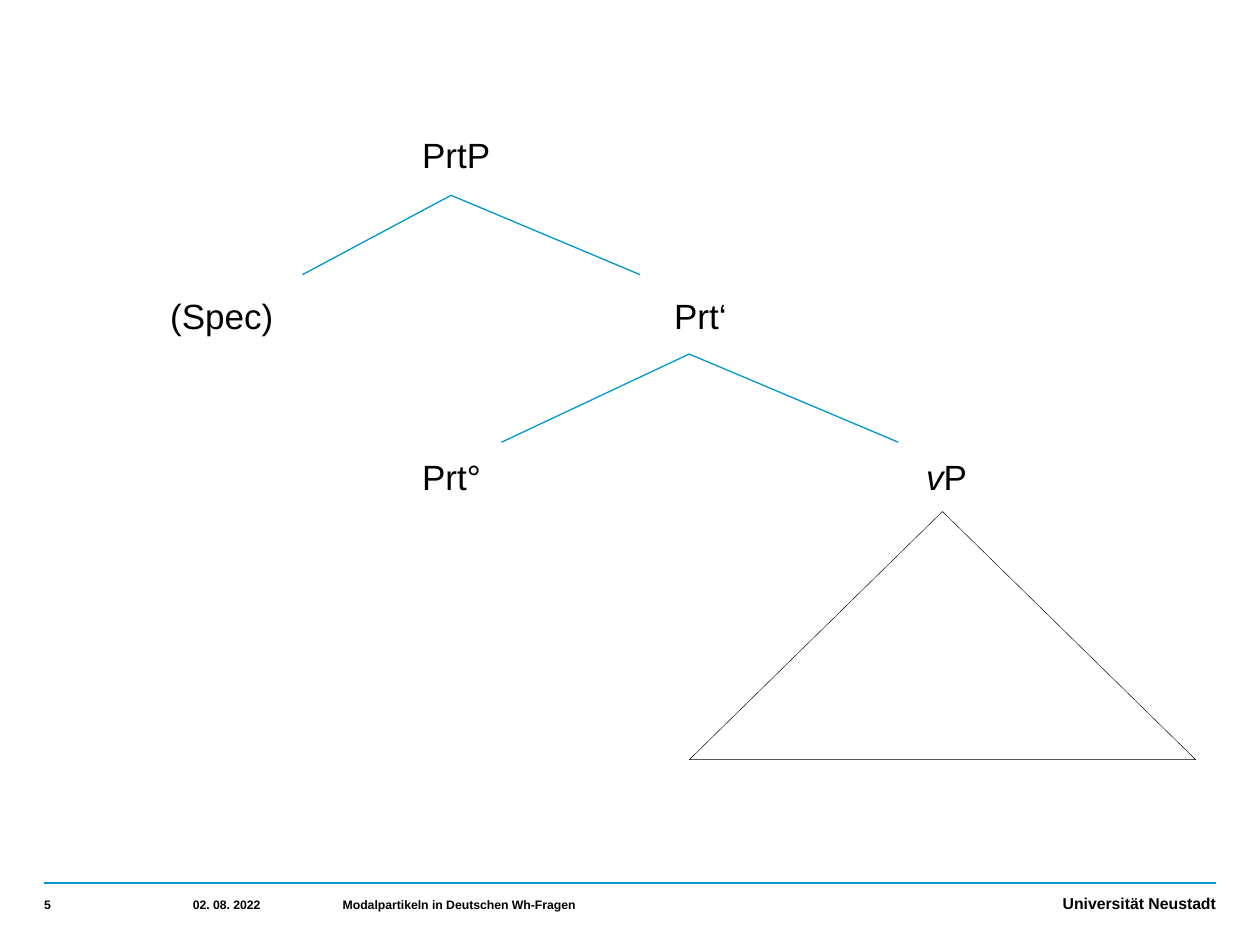
from lxml.etree import SubElement
from pptx import Presentation
from pptx.dml.color import RGBColor
from pptx.enum.shapes import MSO_CONNECTOR as Conn, MSO_SHAPE as Shape
from pptx.enum.text import MSO_ANCHOR as Anchor, MSO_AUTO_SIZE as Fit, PP_ALIGN as Align
from pptx.oxml.ns import qn
from pptx.util import Inches, Pt

BLACK = RGBColor(0, 0, 0)
WHITE = RGBColor(255, 255, 255)
BLUE = RGBColor(0x00, 0x97, 0xCC)
FONT = "Arial"

# Tree rows: runs of (text, italic); each tab moves to the next column
ROWS = [
    [("\t\tPrtP", False)],
    [("\t(Spec)\t\tPrt‘", False)],
    [("\t\tPrt°\t\t", False), ("v", True), ("P", False)],
]
STOPS = [1, 3, 5, 7]

# Each branching node: apex, then the ends of its two branches
NODES = [
    ((3.58, 1.55), [(2.4, 2.18), (5.08, 2.18)]),
    ((5.47, 2.81), [(3.98, 3.51), (7.13, 3.51)]),
]

# Footer: text, left, width, size, alignment
FOOT = [
    ("5", 0.35, 1.02, 7, Align.LEFT),
    ("02. 08. 2022", 1.53, 1.02, 7, Align.LEFT),
    ("Modalpartikeln in Deutschen Wh-Fragen", 2.72, 3.39, 7, Align.LEFT),
    ("Universität Neustadt", 6.26, 3.39, 9, Align.RIGHT),
]


def style(run, size, bold=False, italic=False):
    font = run.font
    font.name, font.size = FONT, Pt(size)
    font.bold, font.italic = bold, italic
    font.color.rgb = BLACK


def set_frame(frame, anchor, top=0, bottom=0):
    frame.word_wrap = True
    frame.auto_size = Fit.NONE
    frame.vertical_anchor = anchor
    frame.margin_left = frame.margin_right = 0
    frame.margin_top, frame.margin_bottom = Inches(top), Inches(bottom)


def add_line(slide, start, end, width):
    ends = [Inches(v) for v in (*start, *end)]
    line = slide.shapes.add_connector(Conn.STRAIGHT, *ends)
    line.line.color.rgb = BLUE
    line.line.width = Pt(width)
    SubElement(line._element.spPr, qn("a:effectLst"))


def add_tree(slide):
    # Node labels in the title, set in columns by tab stops
    title = slide.shapes.title
    title.left, title.top = Inches(0.35), Inches(0.42)
    title.width, title.height = Inches(8.98), Inches(5.91)
    frame = title.text_frame
    set_frame(frame, Anchor.TOP, top=0.64)
    for i, row in enumerate(ROWS):
        para = frame.add_paragraph() if i else frame.paragraphs[0]
        para.alignment = Align.LEFT
        para.line_spacing = 1.0
        para.space_before = Pt(68 if i else 0)
        tabs = SubElement(para._p.get_or_add_pPr(), qn("a:tabLst"))
        for stop in STOPS:
            SubElement(tabs, qn("a:tab"), pos=str(Inches(stop)), algn="l")
        for text, italic in row:
            run = para.add_run()
            run.text = text
            style(run, 20, italic=italic)

    # Triangle below the last node
    box = [Inches(v) for v in (5.47, 4.06, 4.02, 1.97)]
    tri = slide.shapes.add_shape(Shape.ISOSCELES_TRIANGLE, *box)
    tri.shadow.inherit = False
    tri.fill.solid()
    tri.fill.fore_color.rgb = WHITE
    tri.line.color.rgb = BLACK
    tri.line.width = Pt(0.25)

    # Branches
    for apex, ends in NODES:
        for end in ends:
            add_line(slide, apex, end, 0.75)


def add_foot(slide):
    add_line(slide, (0.35, 7.01), (9.65, 7.01), 1)
    for text, left, width, size, align in FOOT:
        box = slide.shapes.add_textbox(
            Inches(left), Inches(7.06), Inches(width), Inches(0.24))
        set_frame(box.text_frame, Anchor.BOTTOM, bottom=0.06)
        para = box.text_frame.paragraphs[0]
        para.text = text
        para.alignment = align
        style(para.runs[0], size, bold=True)


def main():
    deck = Presentation()
    deck.slide_width, deck.slide_height = Inches(10), Inches(7.5)
    slide = deck.slides.add_slide(deck.slide_layouts[5])
    add_foot(slide)
    add_tree(slide)
    deck.save("out.pptx")


if __name__ == "__main__":
    main()
